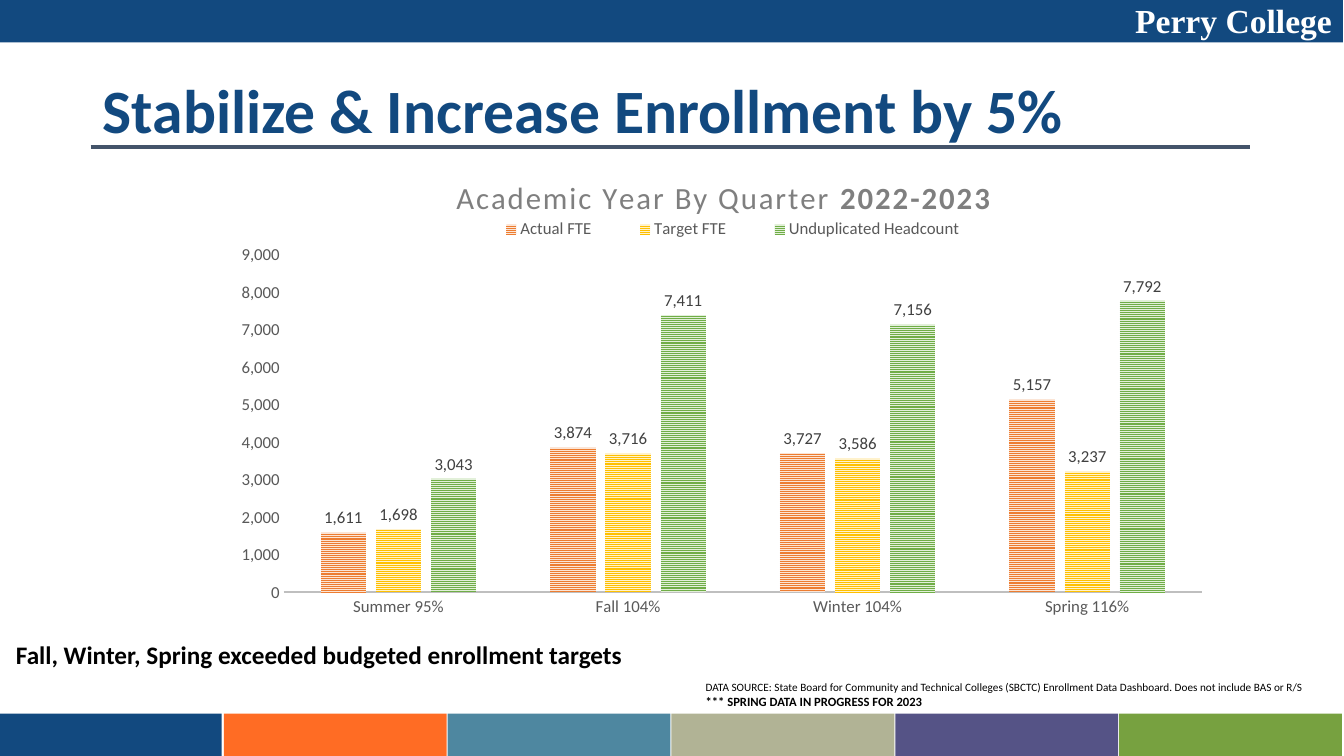
import lxml.etree
import pptx
import pptx.chart.data
import pptx.dml.color
import pptx.enum.chart
import pptx.enum.dml
import pptx.enum.shapes
import pptx.enum.text
import pptx.oxml
import pptx.oxml.ns
import pptx.util

RGBColor = pptx.dml.color.RGBColor
NAVY = RGBColor(0x12, 0x49, 0x7F)
ORANGE = RGBColor(0xFF, 0x6C, 0x24)
TEAL = RGBColor(0x4E, 0x87, 0xA0)
SAGE = RGBColor(0xB1, 0xB3, 0x95)
PURPLE = RGBColor(0x55, 0x53, 0x86)
GREEN = RGBColor(0x77, 0xA1, 0x40)
SLATE = RGBColor(0x44, 0x54, 0x6A)
WHITE = RGBColor(0xFF, 0xFF, 0xFF)
BLACK = RGBColor(0x00, 0x00, 0x00)
TITLE_GREY = RGBColor(0x7F, 0x7F, 0x7F)
AXIS_GREY = RGBColor(0x59, 0x59, 0x59)
AXIS_LINE = RGBColor(0xBF, 0xBF, 0xBF)
LABEL_GREY = RGBColor(0x40, 0x40, 0x40)
PX = 9144  # 100 px to the inch


def write(paragraph, text, size=12, color=BLACK, bold=False, font="Calibri",
          align=pptx.enum.text.PP_ALIGN.LEFT, spacing=None):
    run = paragraph.add_run()
    run.text = text
    run.font.size = pptx.util.Pt(size)
    run.font.color.rgb = color
    run.font.bold = bold
    run.font.name = font
    paragraph.alignment = align
    if spacing:
        run.font._rPr.set("spc", str(spacing))


def place(part, index, inner=False, **fractions):
    """Give a chart part a manual layout in fractions of the chart."""
    for old in part.findall(pptx.oxml.ns.qn("c:layout")):
        part.remove(old)
    layout = pptx.oxml.parse_xml(f"<c:layout {pptx.oxml.ns.nsdecls('c')}><c:manualLayout/></c:layout>")
    settings = {"layoutTarget": "inner"} if inner else {}
    settings.update(xMode="edge", yMode="edge", **fractions)
    for tag, value in settings.items():
        lxml.etree.SubElement(layout[0], pptx.oxml.ns.qn(f"c:{tag}")).set("val", str(value))
    part.insert(index, layout)


presentation = pptx.Presentation()
presentation.slide_width = 1333 * PX
presentation.slide_height = 750 * PX
slide = presentation.slides.add_slide(presentation.slide_layouts[5])

# Top band and the six-colour footer
bands = [(0, 0, 1332, NAVY)]
for i, color in enumerate([NAVY, ORANGE, TEAL, SAGE, PURPLE, GREEN]):
    bands.append((222 * i, 708, 221 if i else 220, color))
for left, top, width, color in bands:
    band = slide.shapes.add_shape(pptx.enum.shapes.MSO_SHAPE.RECTANGLE,
                                  left * PX, top * PX, width * PX, 42 * PX)
    band.shadow.inherit = False
    band.fill.solid()
    band.fill.fore_color.rgb = color
    band.line.fill.background()

# Title and its rule
heading = slide.shapes.title
heading.left, heading.top, heading.width, heading.height = 92 * PX, 40 * PX, 1150 * PX, 145 * PX
heading.text_frame.vertical_anchor = pptx.enum.text.MSO_ANCHOR.MIDDLE
heading.text_frame.paragraphs[0].line_spacing = 0.9
write(heading.text_frame.paragraphs[0], "Stabilize & Increase Enrollment by 5%",
      size=44, color=NAVY, bold=True)

title_rule = slide.shapes.add_connector(pptx.enum.shapes.MSO_CONNECTOR.STRAIGHT,
                                        90 * PX, 146 * PX, 1240 * PX, 146 * PX)
title_rule.line.color.rgb = SLATE
title_rule.line.width = pptx.util.Pt(3)
lxml.etree.SubElement(title_rule._element.spPr, pptx.oxml.ns.qn("a:effectLst"))

# College name, data source and takeaway
notes = [
    (871, -5, 460, 50, [("Perry College", dict(size=24, color=WHITE, bold=True, font="Times New Roman",
                                               align=pptx.enum.text.PP_ALIGN.RIGHT))]),
    (690, 670, 640, 39, [
        ("DATA SOURCE: State Board for Community and Technical Colleges (SBCTC) "
         "Enrollment Data Dashboard. Does not include BAS or R/S", dict(size=8)),
        ("*** SPRING DATA IN PROGRESS FOR 2023", dict(size=9, bold=True))]),
    (6, 629, 834, 40, [("Fall, Winter, Spring exceeded budgeted enrollment targets",
                        dict(size=18, bold=True))]),
]
for left, top, width, height, lines in notes:
    frame = slide.shapes.add_textbox(left * PX, top * PX, width * PX, height * PX).text_frame
    frame.word_wrap = True
    for i, (text, style) in enumerate(lines):
        write(frame.add_paragraph() if i else frame.paragraphs[0], text, **style)

# Enrollment chart
enrollment = pptx.chart.data.CategoryChartData(number_format="#,##0")
enrollment.categories = ["Summer 95%", "Fall 104%", "Winter 104%", "Spring 116%"]
enrollment.add_series("Actual FTE", [1611, 3874, 3727, 5157])
enrollment.add_series("Target FTE", [1698, 3716, 3586, 3237])
enrollment.add_series("Unduplicated Headcount", [3043, 7411, 7156, 7792])
chart = slide.shapes.add_chart(pptx.enum.chart.XL_CHART_TYPE.COLUMN_CLUSTERED,
                               222 * PX, 160 * PX, 990 * PX, 465 * PX, enrollment).chart
chart.font.name = "Calibri"
chart.font.size = pptx.util.Pt(12)
chart.font.color.rgb = AXIS_GREY

chart_heading = chart.chart_title.text_frame.paragraphs[0]
for text, bold in [("Academic Year By Quarter ", False), ("2022-2023", True)]:
    write(chart_heading, text, size=22, color=TITLE_GREY, bold=bold, spacing=150,
          align=pptx.enum.text.PP_ALIGN.CENTER)
chart.has_legend = True
chart.legend.position = pptx.enum.chart.XL_LEGEND_POSITION.TOP
chart.legend.include_in_layout = False
place(chart.chart_title._element, 1, x=0.23, y=0.03)
place(chart.legend._element, 1, x=0.24, y=0.12, w=0.54, h=0.05)
place(chart._chartSpace.chart.plotArea, 0, inner=True, x=0.06, y=0.2, w=0.92, h=0.72)

# Axes
for axis in (chart.category_axis, chart.value_axis):
    axis.major_tick_mark = pptx.enum.chart.XL_TICK_MARK.NONE
    axis.minor_tick_mark = pptx.enum.chart.XL_TICK_MARK.NONE
    axis.has_major_gridlines = False
chart.category_axis.format.line.color.rgb = AXIS_LINE
chart.category_axis.format.line.width = pptx.util.Pt(1.5)
chart.value_axis.format.line.fill.background()
chart.value_axis.minimum_scale = 0
chart.value_axis.maximum_scale = 9000
chart.value_axis.major_unit = 1000
chart.value_axis.tick_labels.number_format = "#,##0"
chart.value_axis.tick_labels.number_format_is_linked = False

# Striped columns with values on top
columns = chart.plots[0]
columns.gap_width = 164
columns.overlap = -22
columns.vary_by_categories = False
stripes = [
    (RGBColor(0xED, 0x7D, 0x31), RGBColor(0xFB, 0xE5, 0xD6)),
    (RGBColor(0xFF, 0xC0, 0x00), RGBColor(0xFF, 0xF2, 0xCC)),
    (RGBColor(0x70, 0xAD, 0x47), RGBColor(0xE2, 0xF0, 0xD9)),
]
for series, (stripe, ground) in zip(columns.series, stripes):
    fill = series.format.fill
    fill.patterned()
    fill.pattern = pptx.enum.dml.MSO_PATTERN.NARROW_HORIZONTAL
    fill.fore_color.rgb = stripe
    fill.back_color.rgb = ground
    labels = series.data_labels
    labels.show_value = True
    labels.position = pptx.enum.chart.XL_LABEL_POSITION.OUTSIDE_END
    labels.number_format = "#,##0"
    labels.number_format_is_linked = False
    labels.font.name = "Calibri"
    labels.font.size = pptx.util.Pt(12)
    labels.font.color.rgb = LABEL_GREY

presentation.save("out.pptx")
